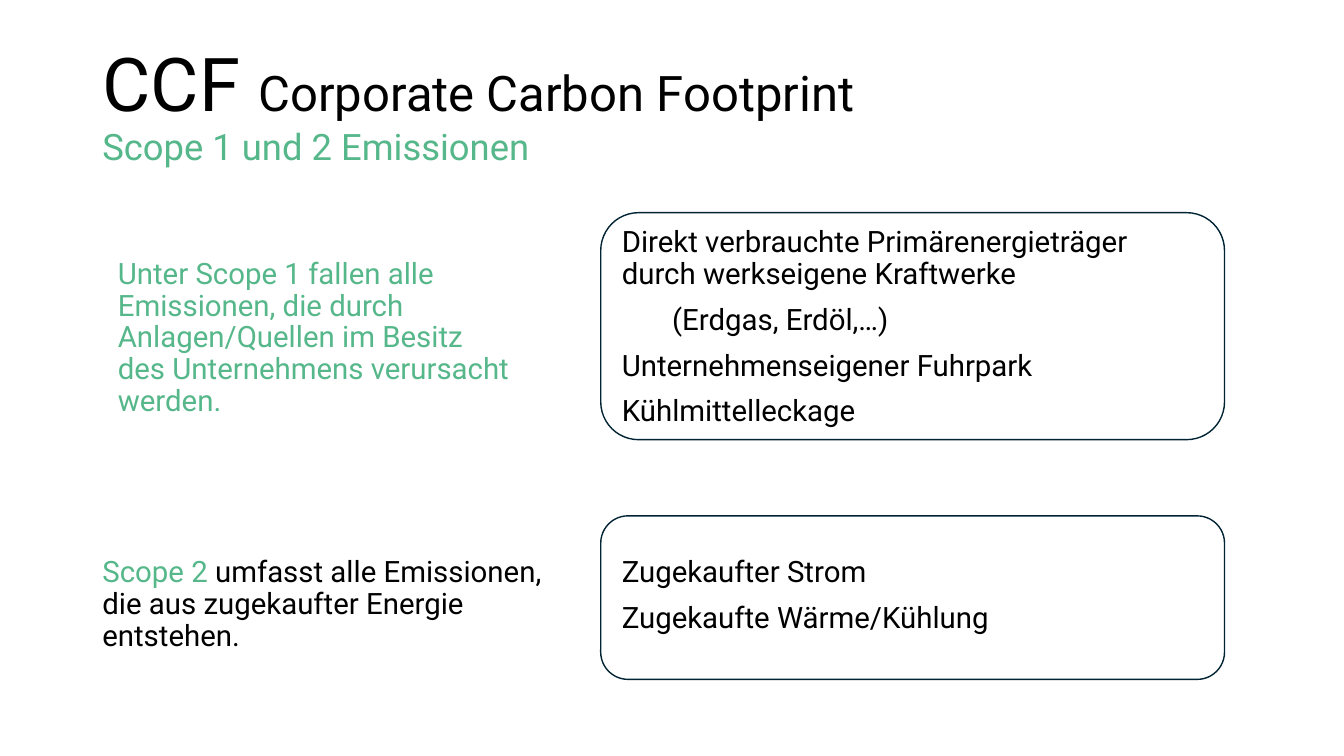
from pptx import Presentation
from pptx import util as u
from pptx.dml.color import RGBColor
from pptx.enum import shapes, text

Cm, Pt = u.Cm, u.Pt
COLORS = {"green": "55B78A", "black": "000000", "navy": "002433"}
FONT = "Roboto"


def style(font, size, color):
    font.name, font.size = FONT, Pt(size)
    font.color.rgb = RGBColor.from_string(COLORS[color])


def add_text(parent, left, top, width, height, paras, size=21):
    """Add a text box; each paragraph is a list of (words, colour) runs."""
    box = parent.add_textbox(Cm(left), Cm(top), Cm(width), Cm(height))
    frame = box.text_frame
    frame.word_wrap = True
    for i, runs in enumerate(paras):
        para = frame.paragraphs[0] if i == 0 else frame.add_paragraph()
        para.line_spacing = 0.9
        if i:
            para.space_before = Pt(10)
        style(para.font, size, runs[-1][1])
        for words, color in runs:
            run = para.add_run()
            run.text = words
            if color != runs[-1][1]:
                style(run.font, size, color)


deck = Presentation()
deck.slide_width, deck.slide_height = Cm(33.87), Cm(19.05)
slide = deck.slides.add_slide(deck.slide_layouts[5])

# Title
title = slide.shapes.title
title.left, title.top, title.width, title.height = Cm(2.33), Cm(1.02), Cm(29.21), Cm(2.39)
title.text_frame.vertical_anchor = text.MSO_ANCHOR.MIDDLE
title.text_frame.auto_size = text.MSO_AUTO_SIZE.NONE
head = title.text_frame.paragraphs[0]
head.alignment = text.PP_ALIGN.LEFT
head.line_spacing = 0.9
for words, size in (("CCF ", 53), ("Corporate Carbon Footprint", 35)):
    run = head.add_run()
    run.text = words
    style(run.font, size, "black")

# Left column
add_text(slide.shapes, 2.33, 3.13, 16.03, 1.37,
         [[("Scope 1 und 2 Emissionen", "green")]], 26)
add_text(slide.shapes, 2.72, 6.4, 10.5, 4.95,
         [[("Unter Scope 1 fallen alle Emissionen, die durch Anlagen/Quellen im Besitz "
            "des Unternehmens verursacht werden.", "green")]])
add_text(slide.shapes, 2.33, 13.92, 11.71, 3.5,
         [[("Scope 2", "green"),
           (" umfasst alle Emissionen, die aus zugekaufter Energie entstehen.", "black")]])

# Framed lists: frame top and height, text top and height, lines
panels = [
    (5.36, 5.72, 5.61, 5.38,
     ["Direkt verbrauchte Primärenergieträger durch werkseigene Kraftwerke",
      "\t(Erdgas, Erdöl,…)", "Unternehmenseigener Fuhrpark", "Kühlmittelleckage"]),
    (13.0, 4.12, 13.92, 2.62, ["Zugekaufter Strom", "Zugekaufte Wärme/Kühlung"]),
]
for top, height, text_top, text_height, lines in panels:
    group = slide.shapes.add_group_shape().shapes
    add_text(group, 15.42, text_top, 15.19, text_height,
             [[(line, "black")] for line in lines])
    frame = group.add_shape(shapes.MSO_SHAPE.FLOWCHART_ALTERNATE_PROCESS,
                            Cm(15.14), Cm(top), Cm(15.72), Cm(height))
    frame.shadow.inherit = False
    frame.fill.background()
    frame.line.color.rgb = RGBColor.from_string(COLORS["navy"])
    frame.line.width = Pt(1)

deck.save("out.pptx")
